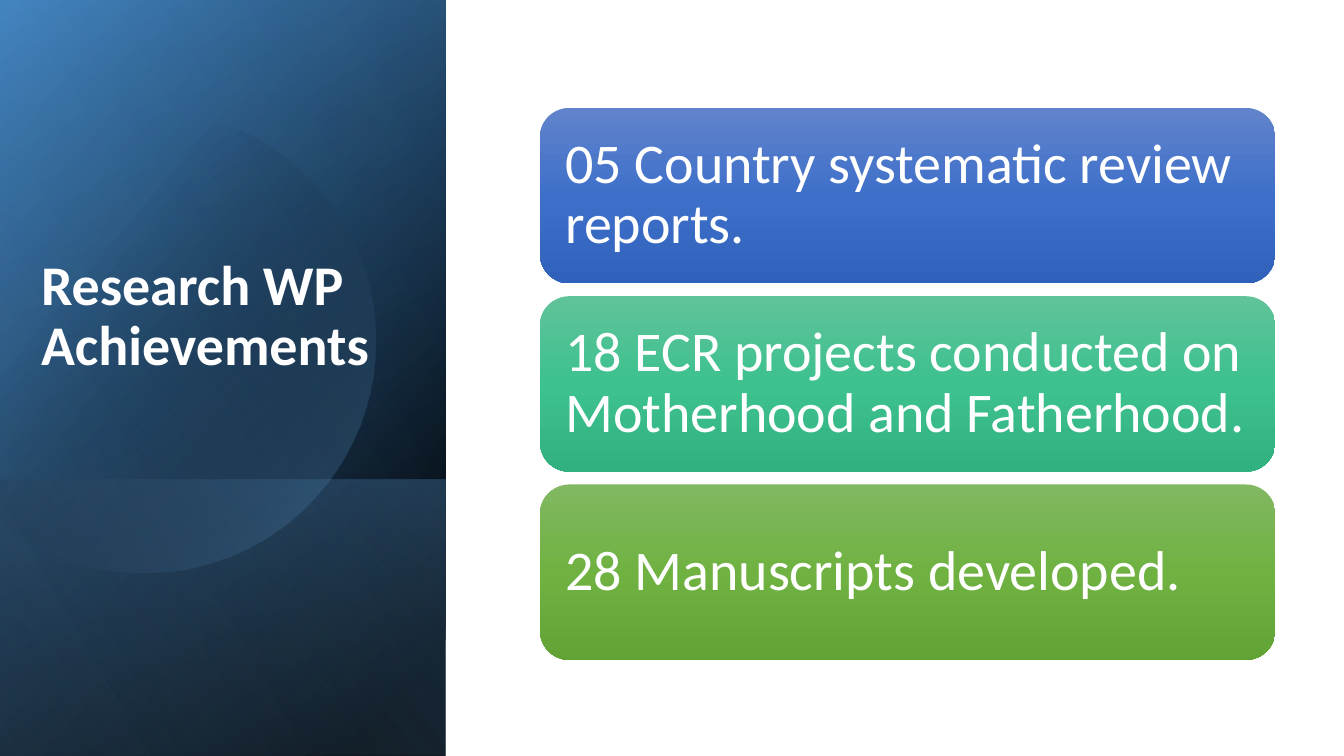
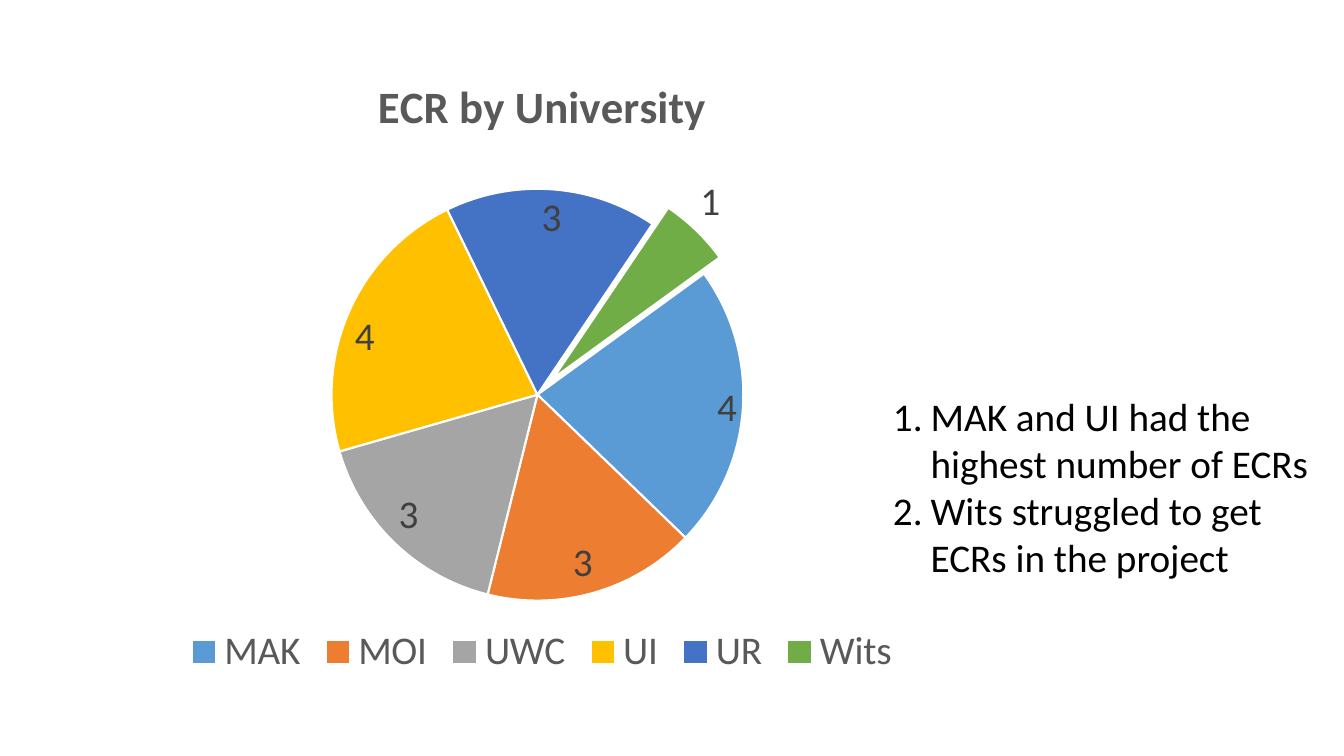
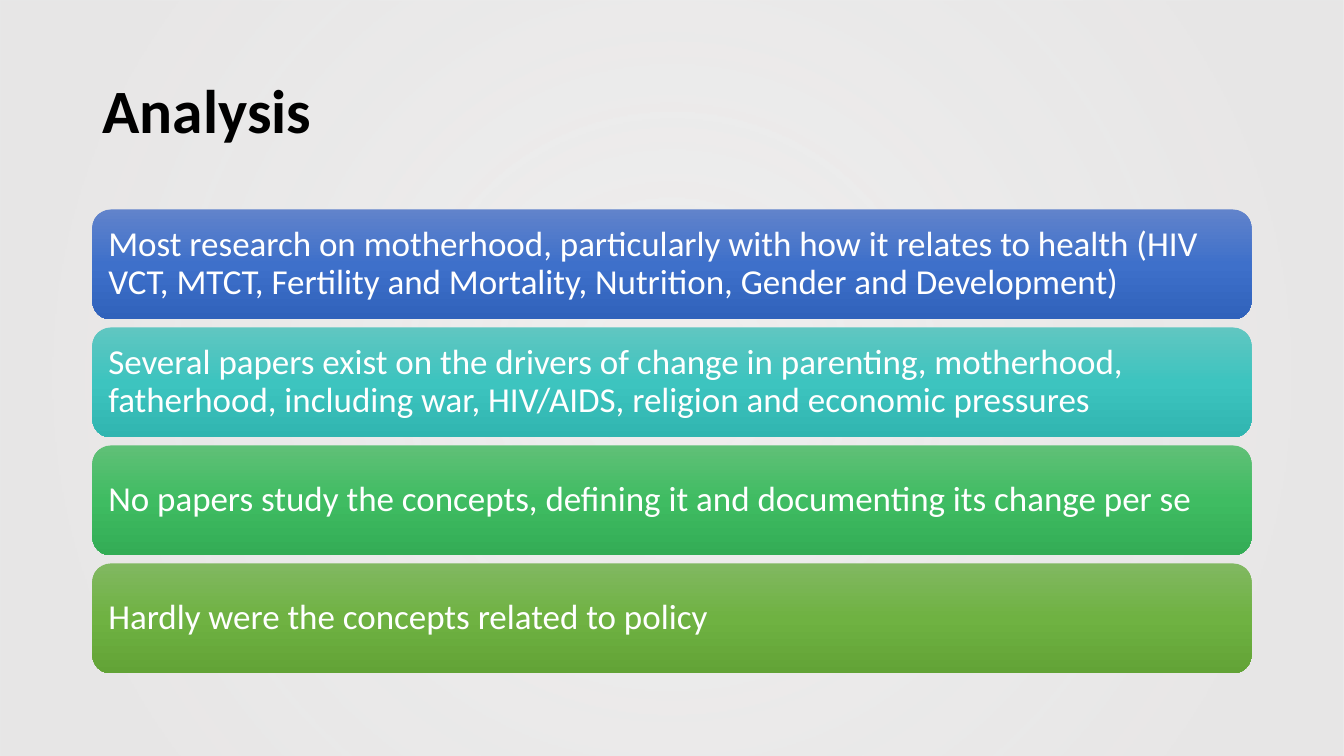
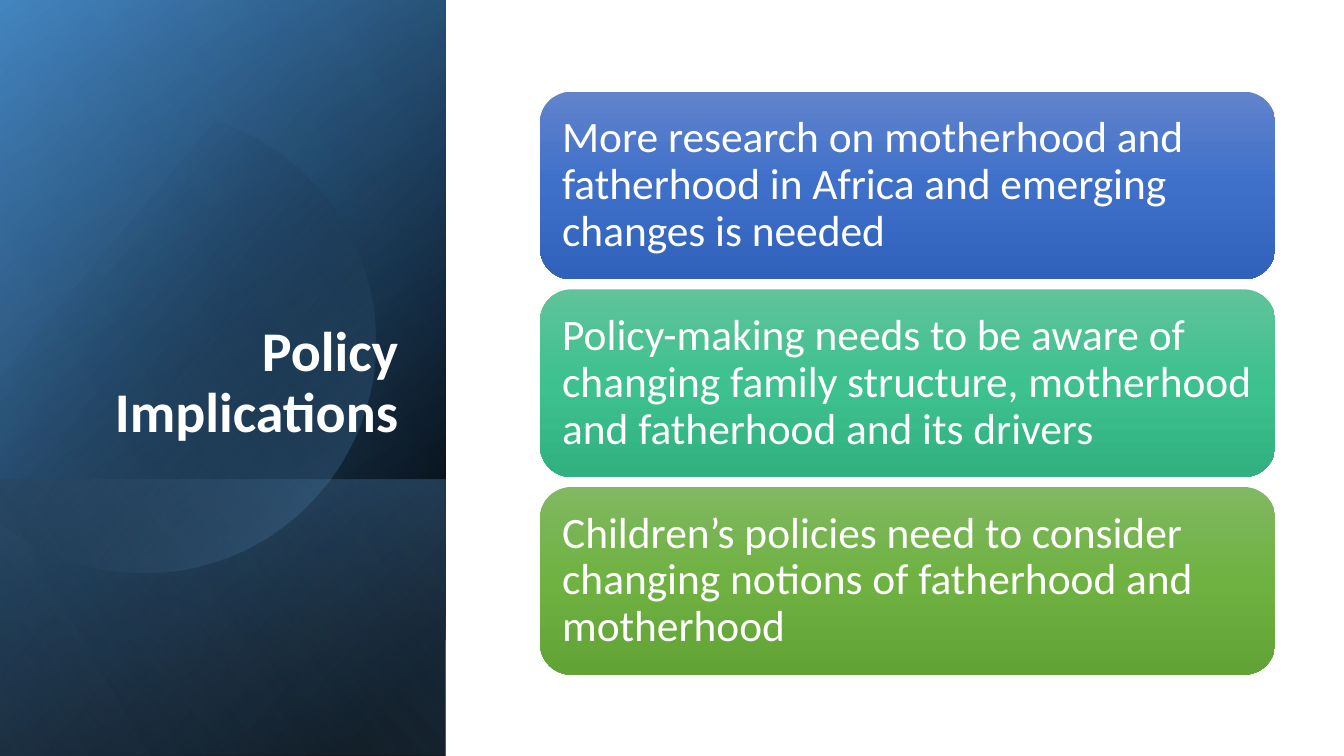
import math
from dataclasses import dataclass

import pptx
import pptx.chart.data
import pptx.dml.color
import pptx.enum.chart
import pptx.enum.shapes
import pptx.enum.text
import pptx.oxml
import pptx.oxml.ns
import pptx.util

Cm = pptx.util.Cm
Pt = pptx.util.Pt
RGB = pptx.dml.color.RGBColor.from_string
ALIGN = pptx.enum.text.PP_ALIGN
ANCHOR = pptx.enum.text.MSO_ANCHOR
SHAPE = pptx.enum.shapes.MSO_SHAPE
LABEL = pptx.enum.chart.XL_LABEL_POSITION


@dataclass(frozen=True)
class Theme:
    font: str = "Calibri"
    white: str = "FFFFFF"
    black: str = "000000"
    grey: str = "595959"
    label: str = "404040"
    wash: str = "E7E6E6"
    navy: str = "2E75B6"
    sky: str = "5B9BD5"
    pale: str = "9DC3E6"
    blue: tuple = ("6183CB", "3E70CA", "3062BB")
    teal: tuple = ("60C6C1", "3DC4BF", "30B5B0")
    mint: tuple = ("60C39A", "3DC18F", "31B080")
    green: tuple = ("60C077", "3FBC62", "33AC55")
    lime: tuple = ("81B861", "6FB242", "62A336")
    slices: tuple = ("5B9BD5", "ED7D31", "A5A5A5", "FFC000", "4472C4", "70AD47")
    title: int = 44
    side_title: int = 40
    chart_title: int = 32
    body: int = 28
    card_large: int = 40
    card_medium: int = 31
    card_small: int = 25


class Deck:
    width, height = 33.87, 19.05
    panel_width = 11.23

    def __init__(self, theme):
        self.t = theme
        self.prs = pptx.Presentation()
        self.prs.slide_width = Cm(self.width)
        self.prs.slide_height = Cm(self.height)
        self.s = None

    def slide(self, layout):
        self.s = self.prs.slides.add_slide(self.prs.slide_layouts[layout])

    def style(self, font, size, color, bold=False):
        font.name = self.t.font
        font.size = Pt(size)
        font.bold = bold
        font.color.rgb = RGB(color)

    def place(self, sp, left, top, width, height):
        sp.left, sp.top, sp.width, sp.height = map(Cm, (left, top, width, height))

    def gradient(self, sp, stops, angle=None):
        gs = "".join(
            f'<a:gs pos="{pos * 1000}"><a:srgbClr val="{color}">'
            f'<a:alpha val="{alpha * 1000}"/></a:srgbClr></a:gs>'
            for pos, color, alpha in stops
        )
        if angle is None:
            way = ('<a:path path="circle"><a:fillToRect l="50000" t="50000" '
                   'r="50000" b="50000"/></a:path>')
        else:
            way = f'<a:lin ang="{angle * 60000}" scaled="0"/>'
        fill = pptx.oxml.parse_xml(
            f'<a:gradFill {pptx.oxml.ns.nsdecls("a")} rotWithShape="1">'
            f"<a:gsLst>{gs}</a:gsLst>{way}</a:gradFill>"
        )
        sp.fill.background()
        spPr = sp.element.spPr
        spPr.replace(spPr.find(pptx.oxml.ns.qn("a:noFill")), fill)
        sp.line.fill.background()
        sp.shadow.inherit = False

    def box(self, kind, left, top, width, height, stops, angle=None):
        sp = self.s.shapes.add_shape(kind, *map(Cm, (left, top, width, height)))
        self.gradient(sp, stops, angle)
        return sp

    def turned_box(self, top, height, stops, angle):
        shift = (self.panel_width - height) / 2
        sp = self.box(SHAPE.RECTANGLE, shift, top - shift, height,
                      self.panel_width, stops, angle)
        sp.rotation = 90
        sp.element.spPr.xfrm.set("flipH", "1")

    def disc(self, x, y, radius, stops, angle):
        limit = math.acos(-x / radius)
        steps = 90
        turns = [limit * (2 * i / steps - 1) for i in range(steps + 1)]
        points = [(Cm(x + radius * math.cos(a)), Cm(y + radius * math.sin(a)))
                  for a in turns]
        fb = self.s.shapes.build_freeform(*points[0], scale=1.0)
        fb.add_line_segments(points[1:], close=True)
        self.gradient(fb.convert_to_shape(), stops, angle)

    def side_panel(self):
        t = self.t
        full = (0, self.height)
        self.turned_box(*full, [(8, t.black, 100), (100, t.navy, 100)], 50)
        self.turned_box(*full, [(0, t.black, 0), (99, t.sky, 46)], 30)
        self.turned_box(12.09, 6.96, [(2, t.sky, 29), (100, t.black, 30)], 130)
        self.disc(3.64, 8.6, 5.83, [(29, t.black, 0), (100, t.sky, 43)], 40)
        self.turned_box(*full, [(0, t.black, 0), (99, t.pale, 11)], 120)

    def title(self, text, frame, size, color, anchor, align=ALIGN.LEFT):
        sp = self.s.shapes.title
        sp.element.getparent().append(sp.element)
        self.place(sp, *frame)
        tf = sp.text_frame
        tf.text = text
        tf.word_wrap = True
        tf.auto_size = pptx.enum.text.MSO_AUTO_SIZE.NONE
        tf.vertical_anchor = anchor
        p = tf.paragraphs[0]
        p.alignment = align
        p.line_spacing = 0.9
        self.style(p.runs[0].font, size, color, True)

    def side_title(self, text, frame, align=ALIGN.LEFT):
        self.title(text, frame, self.t.side_title, self.t.white, ANCHOR.BOTTOM, align)

    def cards(self, left, top, width, height, size, items):
        gap = Pt(size * 0.23).cm
        margin = Pt(size * 0.3)
        for i, (text, colors) in enumerate(items):
            stops = [(pos, color, 100) for pos, color in zip((0, 50, 100), colors)]
            sp = self.box(SHAPE.ROUNDED_RECTANGLE, left, top + i * (height + gap),
                          width, height, stops, 90)
            tf = sp.text_frame
            tf.text = text
            tf.word_wrap = True
            tf.vertical_anchor = ANCHOR.MIDDLE
            tf.margin_left = tf.margin_right = margin
            tf.margin_top = tf.margin_bottom = margin
            p = tf.paragraphs[0]
            p.alignment = ALIGN.LEFT
            p.line_spacing = 0.9
            self.style(p.runs[0].font, size, self.t.white)

    def numbered_list(self, items, frame):
        sp = self.s.placeholders[1]
        self.place(sp, *frame)
        tf = sp.text_frame
        tf.text = "\n".join(items)
        tf.word_wrap = True
        tf.auto_size = pptx.enum.text.MSO_AUTO_SIZE.NONE
        tf.vertical_anchor = ANCHOR.TOP
        for p in tf.paragraphs:
            p.line_spacing = 1.0
            p.space_before = p.space_after = Pt(0)
            pPr = p._p.get_or_add_pPr()
            pPr.set("marL", str(Cm(0.95)))
            pPr.set("indent", str(-Cm(0.95)))
            pPr.append(pptx.oxml.parse_xml(
                f'<a:buAutoNum {pptx.oxml.ns.nsdecls("a")} type="arabicPeriod"/>'))
            self.style(p.runs[0].font, self.t.body, self.t.black)

    def pie(self, title, cats, vals, frame, start, pulled, explosion):
        t = self.t
        data = pptx.chart.data.CategoryChartData(number_format="General")
        data.categories = cats
        data.add_series("Series 1", vals)
        chart = self.s.shapes.add_chart(
            pptx.enum.chart.XL_CHART_TYPE.PIE, *map(Cm, frame), data).chart
        chart.has_title = True
        tf = chart.chart_title.text_frame
        tf.text = title
        self.style(tf.paragraphs[0].runs[0].font, t.chart_title, t.grey, True)
        chart.has_legend = True
        chart.legend.position = pptx.enum.chart.XL_LEGEND_POSITION.BOTTOM
        chart.legend.include_in_layout = False
        self.style(chart.legend.font, t.body, t.grey)

        plot = chart.plots[0]
        plot.vary_by_categories = True
        ser = plot.series[0]
        labels = ser.data_labels
        labels.show_value = True
        labels.position = LABEL.INSIDE_END
        self.style(labels.font, t.body, t.label)
        for i, color in enumerate(t.slices):
            fmt = ser.points[i].format
            fmt.fill.solid()
            fmt.fill.fore_color.rgb = RGB(color)
            fmt.line.color.rgb = RGB(t.white)
            fmt.line.width = Pt(1.5)
        label = ser.points[pulled].data_label
        self.style(label.font, t.body, t.label)
        label.position = LABEL.OUTSIDE_END

        ns = pptx.oxml.ns.nsdecls("c")
        qn = pptx.oxml.ns.qn
        pie = chart.element.find(".//" + qn("c:pieChart"))
        pie.append(pptx.oxml.parse_xml(f'<c:firstSliceAng {ns} val="{start}"/>'))
        point = pie.findall(".//" + qn("c:dPt"))[pulled]
        point.find(qn("c:spPr")).addprevious(
            pptx.oxml.parse_xml(f'<c:explosion {ns} val="{explosion}"/>'))
        area = pie.getparent()
        for old in area.findall(qn("c:layout")):
            area.remove(old)
        area.insert(0, pptx.oxml.parse_xml(
            f'<c:layout {ns}><c:manualLayout><c:layoutTarget val="inner"/>'
            '<c:xMode val="edge"/><c:yMode val="edge"/><c:x val="0.27"/>'
            '<c:y val="0.22"/><c:w val="0.45"/><c:h val="0.65"/>'
            "</c:manualLayout></c:layout>"))


def main():
    t = Theme()
    d = Deck(t)

    d.slide(5)
    d.side_panel()
    d.side_title("Research WP Achievements", (0.78, 4.67, 9.22, 4.98))
    d.cards(13.61, 2.72, 18.53, 4.42, t.card_large, [
        ("05 Country systematic review reports.", t.blue),
        ("18 ECR projects conducted on Motherhood and Fatherhood.", t.mint),
        ("28 Manuscripts developed.", t.lime),
    ])

    d.slide(1)
    title = d.s.shapes.title.element
    title.getparent().remove(title)
    d.pie("ECR by University", ["MAK", "MOI", "UWC", "UI", "UR", "Wits"],
          [4, 3, 3, 4, 3, 1], (2.13, 1.24, 23.06, 15.98),
          start=54, pulled=5, explosion=11)
    d.numbered_list([
        "MAK and UI had the highest number of ECRs",
        "Wits struggled to get ECRs in the project",
    ], (22.25, 9.75, 11.61, 5.05))

    d.slide(5)
    d.box(SHAPE.RECTANGLE, 0, 0, d.width, d.height,
          [(10, t.wash, 68), (85, t.wash, 97)])
    d.title("Analysis", (2.33, 1.02, 29.21, 3.68), t.title, t.black, ANCHOR.MIDDLE)
    d.cards(2.33, 5.28, 29.21, 2.77, t.card_small, [
        ("Most research on motherhood, particularly with how it relates to health "
         "(HIV VCT, MTCT, Fertility and Mortality, Nutrition, Gender and "
         "Development)", t.blue),
        ("Several papers exist on the drivers of change in parenting, motherhood, "
         "fatherhood, including war, HIV/AIDS, religion and economic pressures",
         t.teal),
        ("No papers study the concepts, defining it and documenting its change "
         "per se", t.green),
        ("Hardly were the concepts related to policy", t.lime),
    ])

    d.slide(5)
    d.side_panel()
    d.side_title("Policy Implications", (1.63, 4.67, 8.66, 6.65), ALIGN.RIGHT)
    d.cards(13.61, 2.31, 18.53, 4.73, t.card_medium, [
        ("More research on motherhood and fatherhood in Africa and emerging "
         "changes is needed", t.blue),
        ("Policy-making needs to be aware of changing family structure, "
         "motherhood and fatherhood and its drivers", t.mint),
        ("Children’s policies need to consider changing notions of fatherhood "
         "and motherhood", t.lime),
    ])

    d.prs.save("out.pptx")


if __name__ == "__main__":
    main()
